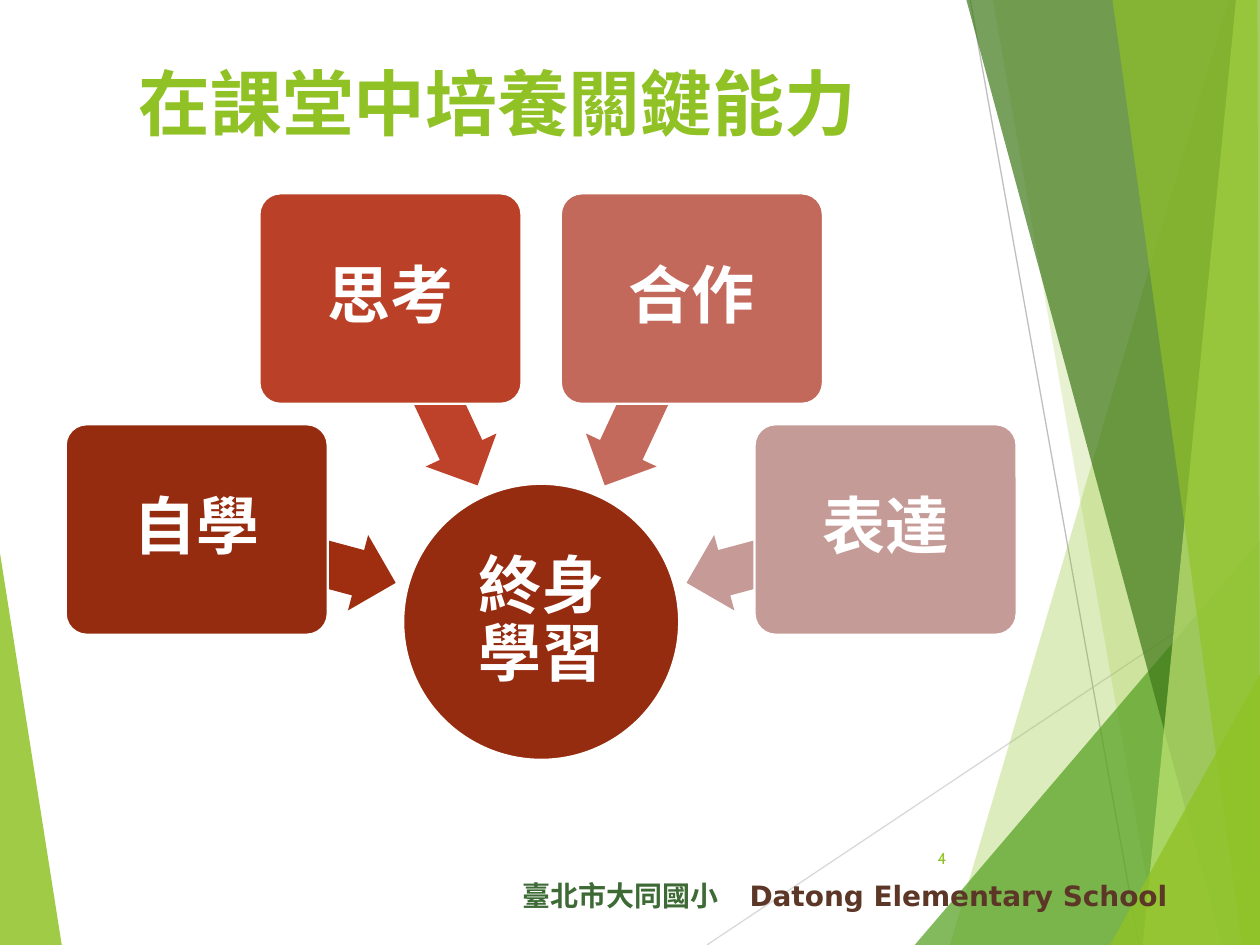
from dataclasses import dataclass
from math import cos, radians, sin

from lxml import etree
from pptx import Presentation
from pptx import util as u
from pptx.dml.color import RGBColor
from pptx.enum import shapes, text
from pptx.oxml import ns

COLORS = {
    "lime": "90C226", "green": "54A021", "forest": "3F7819", "pale": "C0E474",
    "light_gray": "D9D9D9", "gray": "BFBFBF", "white": "FFFFFF",
    "school": "3D6A35", "brown": "5C3626", "rust": "962C0F",
}
COLUMNS, ROWS = 100, 75
CELL = u.Inches(0.1)
HUB_COLUMN, HUB_ROW, HUB_SIZE = 42.95, 49.35, 21.9
BOX_RADIUS, BOX_WIDTH, BOX_HEIGHT = 28.3, 20.8, 16.7
ARROW_RADIUS, ARROW_WIDTH, ARROW_HEIGHT = 20.1, 16.3, 6.2
CJK_FONT = "Noto Sans CJK SC"


@dataclass
class Facet:
    points: list[tuple[float, float]]
    color: str
    opacity: int


@dataclass
class Ray:
    start: tuple[float, float]
    end: tuple[float, float]
    color: str


@dataclass
class Skill:
    label: str
    angle: int
    box_color: str
    arrow_color: str


LEFT_FACET = Facet([(0, 43.9), (4.9, 75), (0, 75)], "lime", 85)
RAYS = [
    Ray((56.1, 75), (100, 45.7), "light_gray"),
    Ray((77, 0), (90.4, 75), "gray"),
]
RIGHT_FACETS = [
    Facet([(97.5, 0), (75.4, 75), (100, 75), (100, 0)], "lime", 30),
    Facet([(78.8, 0), (91.9, 75), (100, 75), (100, 0)], "lime", 20),
    Facet([(72.6, 75), (100, 42.9), (100, 75)], "green", 72),
    Facet([(76.7, 0), (97, 75), (100, 75), (100, 0)], "forest", 70),
    Facet([(98.1, 0), (90.7, 75), (100, 75), (100, 0)], "pale", 70),
    Facet([(88.3, 0), (98.6, 75), (100, 75), (99.8, 0)], "lime", 65),
    Facet([(88.1, 75), (100, 53.5), (100, 75)], "lime", 80),
]
SKILLS = [
    Skill("自學", 195, "962C0F", "9E2E0F"),
    Skill("思考", 245, "BA4128", "BE4229"),
    Skill("合作", 295, "C3695C", "C46A5D"),
    Skill("表達", 345, "C59B98", "C69A97"),
]


def cells(count: float) -> int:
    return round(count * CELL)


def rgb(color: str) -> RGBColor:
    return RGBColor.from_string(COLORS.get(color, color))


def paint(shape, color: str, outlined: bool = False) -> None:
    shape.shadow.inherit = False
    shape.fill.solid()
    shape.fill.fore_color.rgb = rgb(color)
    if outlined:
        shape.line.color.rgb = rgb("white")
        shape.line.width = u.Pt(1.25)
    else:
        shape.line.fill.background()


def style(font, name: str, size: int, color: str, bold: bool = True) -> None:
    font.name, font.size, font.bold = name, u.Pt(size), bold
    font.color.rgb = rgb(color)
    latin = font._element.find(ns.qn("a:latin"))
    east_asian = etree.Element(ns.qn("a:ea"), typeface=CJK_FONT)
    latin.addnext(east_asian)


def draw_facet(page, facet: Facet) -> None:
    points = [(cells(column), cells(row)) for column, row in facet.points]
    builder = page.shapes.build_freeform(*points[0])
    builder.add_line_segments(points[1:])
    shape = builder.convert_to_shape()
    paint(shape, facet.color)
    fill = shape._element.spPr.find(ns.qn("a:solidFill"))
    etree.SubElement(fill[0], ns.qn("a:alpha"), val=str(facet.opacity * 1000))


def draw_ray(page, ray: Ray) -> None:
    line = page.shapes.add_connector(
        shapes.MSO_CONNECTOR.STRAIGHT, *map(cells, ray.start + ray.end))
    line.line.color.rgb = rgb(ray.color)
    line.line.width = u.Pt(0.75)
    etree.SubElement(line._element.spPr, ns.qn("a:effectLst"))


def add_polar(page, kind, angle: int, radius: float, width: float, height: float):
    column = HUB_COLUMN + radius * cos(radians(angle)) - width / 2
    row = HUB_ROW + radius * sin(radians(angle)) - height / 2
    return page.shapes.add_shape(kind, *map(cells, (column, row, width, height)))


def label_shape(shape, label: str, inset: float) -> None:
    frame = shape.text_frame
    frame.word_wrap = True
    frame.vertical_anchor = text.MSO_ANCHOR.MIDDLE
    frame.margin_left = frame.margin_right = u.Inches(inset)
    frame.margin_top = frame.margin_bottom = u.Inches(inset)
    para = frame.paragraphs[0]
    span = para.add_run()
    span.text = label
    para.alignment = text.PP_ALIGN.CENTER
    para.line_spacing = 0.9
    style(para.font, "Quicksand", 36, "white")


def draw_hub(page) -> None:
    hub = add_polar(page, shapes.MSO_SHAPE.OVAL, 0, 0, HUB_SIZE, HUB_SIZE)
    paint(hub, "rust", outlined=True)
    label_shape(hub, "終身 學習", 0.03)


def draw_skill(page, skill: Skill) -> None:
    arrow = add_polar(page, shapes.MSO_SHAPE.LEFT_ARROW, skill.angle,
                      ARROW_RADIUS, ARROW_WIDTH, ARROW_HEIGHT)
    arrow.adjustments[0], arrow.adjustments[1] = 0.6, 0.5
    arrow.rotation = skill.angle
    paint(arrow, skill.arrow_color)
    box = add_polar(page, shapes.MSO_SHAPE.ROUNDED_RECTANGLE, skill.angle,
                    BOX_RADIUS, BOX_WIDTH, BOX_HEIGHT)
    box.adjustments[0] = 0.1
    paint(box, skill.box_color, outlined=True)
    label_shape(box, skill.label, 0.07)


def add_text(page, place: tuple[float, ...], words: str, align):
    box = page.shapes.add_textbox(*map(cells, place))
    box.text_frame.word_wrap = True
    para = box.text_frame.paragraphs[0]
    span = para.add_run()
    span.text = words
    para.alignment = align
    return box, para


def draw_texts(page) -> None:
    number, para = add_text(page, (70.5, 66.1, 5.6, 4), "4", text.PP_ALIGN.RIGHT)
    number.text_frame.vertical_anchor = text.MSO_ANCHOR.MIDDLE
    style(para.font, "Cabin", 9, "lime", bold=False)

    _, para = add_text(page, (40.5, 69.2, 55.9, 3.9), "臺北市大同國小\t", text.PP_ALIGN.LEFT)
    tabs = etree.SubElement(para._p.get_or_add_pPr(), ns.qn("a:tabLst"))
    etree.SubElement(tabs, ns.qn("a:tab"), pos=str(cells(18)), algn="l")
    style(para.runs[0].font, CJK_FONT, 16, "school")
    span = para.add_run()
    span.text = "Datong Elementary School"
    style(span.font, "DejaVu Sans", 16, "brown")

    _, para = add_text(page, (3, 4.2, 73, 9.2), "在課堂中培養關鍵能力", text.PP_ALIGN.CENTER)
    style(para.font, "Cabin", 41, "lime")


def main() -> None:
    deck = Presentation()
    deck.slide_width, deck.slide_height = cells(COLUMNS), cells(ROWS)
    page = deck.slides.add_slide(deck.slide_layouts[6])
    draw_facet(page, LEFT_FACET)
    for ray in RAYS:
        draw_ray(page, ray)
    for facet in RIGHT_FACETS:
        draw_facet(page, facet)
    draw_texts(page)
    draw_hub(page)
    for skill in SKILLS:
        draw_skill(page, skill)
    deck.save("out.pptx")


if __name__ == "__main__":
    main()
